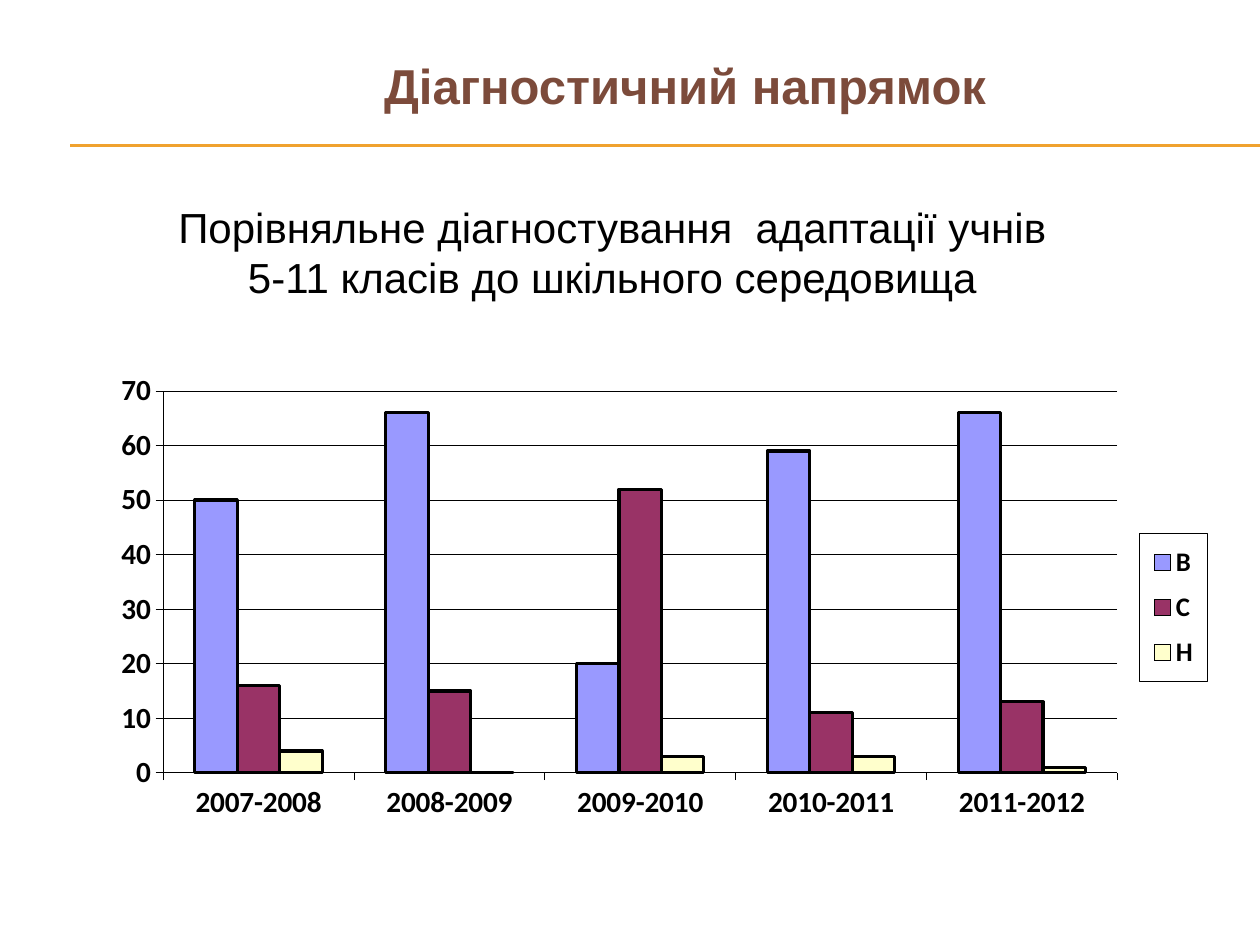
"""Build a slide comparing pupils' adaptation to school over five years."""
from lxml import etree
from pptx import Presentation
from pptx.chart.data import CategoryChartData
from pptx.dml.color import RGBColor
from pptx.enum.chart import XL_CHART_TYPE, XL_LEGEND_POSITION, XL_TICK_LABEL_POSITION, XL_TICK_MARK
from pptx.enum.shapes import MSO_CONNECTOR
from pptx.enum.text import MSO_ANCHOR, PP_ALIGN
from pptx.oxml import parse_xml
from pptx.oxml.ns import nsdecls, qn
from pptx.util import Pt

COLUMN = XL_CHART_TYPE.COLUMN_CLUSTERED
LEGEND_RIGHT = XL_LEGEND_POSITION.RIGHT
LABELS_LOW = XL_TICK_LABEL_POSITION.LOW
TICK_OUTSIDE = XL_TICK_MARK.OUTSIDE
STRAIGHT = MSO_CONNECTOR.STRAIGHT
TOP = MSO_ANCHOR.TOP
CENTER = PP_ALIGN.CENTER

BLACK = RGBColor(0x00, 0x00, 0x00)
BROWN = RGBColor(0x7C, 0x4B, 0x3B)
ORANGE = RGBColor(0xF0, 0xA2, 0x2E)
LILAC = RGBColor(0x99, 0x99, 0xFF)
PLUM = RGBColor(0x99, 0x33, 0x66)
CREAM = RGBColor(0xFF, 0xFF, 0xCC)

TITLE = "Діагностичний напрямок"
SUBTITLE = ["Порівняльне діагностування  адаптації учнів", "5-11 класів до шкільного середовища"]
YEARS = ["2007-2008", "2008-2009", "2009-2010", "2010-2011", "2011-2012"]
SERIES = [
    ("В", [50, 66, 20, 59, 66], LILAC),
    ("С", [16, 15, 52, 11, 13], PLUM),
    ("Н", [4, 0, 3, 3, 1], CREAM),
]


def place(shape, left, top, width, height):
    """Set a shape's position and size in points."""
    shape.left, shape.top = Pt(left), Pt(top)
    shape.width, shape.height = Pt(width), Pt(height)


def style_font(font, name, size, color, bold):
    """Set the face, size, colour and weight of a font."""
    font.name, font.size, font.bold = name, Pt(size), bold
    font.color.rgb = color


def write_lines(frame, lines, size, color, bold=False):
    """Write centred Arial paragraphs into a text frame."""
    frame.vertical_anchor = TOP
    for index, line in enumerate(lines):
        paragraph = frame.add_paragraph() if index else frame.paragraphs[0]
        paragraph.alignment = CENTER
        run = paragraph.add_run()
        run.text = line
        style_font(run.font, "Arial", size, color, bold)


def add_title(slide):
    """Place and fill the title placeholder."""
    title = slide.shapes.title
    place(title, 210, 28, 363, 41)
    title.text_frame.word_wrap = False
    write_lines(title.text_frame, [TITLE], 28, BROWN, True)


def add_subtitle(slide):
    """Add the two-line subtitle."""
    box = slide.shapes.add_textbox(Pt(38.9), Pt(111.6), Pt(622), Pt(65.5))
    box.text_frame.word_wrap = True
    write_lines(box.text_frame, SUBTITLE, 24, BLACK)


def add_rule(slide, y):
    """Add a thin orange line running to the right edge."""
    rule = slide.shapes.add_connector(STRAIGHT, Pt(40.3), Pt(y), Pt(720), Pt(y))
    rule.line.color.rgb = ORANGE
    rule.line.width = Pt(0.75)
    etree.SubElement(rule._element.spPr, qn("a:effectLst"))


def style_line(line, width):
    """Make a chart line black with the given width."""
    line.color.rgb = BLACK
    line.width = Pt(width)


def manual_layout(x, y, width, height, target=""):
    """Return a chart layout element given as fractions of the chart."""
    return parse_xml(
        f'<c:layout {nsdecls("c")}><c:manualLayout>{target}'
        '<c:xMode val="edge"/><c:yMode val="edge"/>'
        f'<c:x val="{x}"/><c:y val="{y}"/><c:w val="{width}"/><c:h val="{height}"/>'
        '</c:manualLayout></c:layout>'
    )


def style_axis(axis):
    """Format an axis line, its ticks and its labels."""
    axis.major_tick_mark = TICK_OUTSIDE
    style_font(axis.tick_labels.font, "Calibri", 16.7, BLACK, True)
    style_line(axis.format.line, 0.45)


def style_legend(chart):
    """Show a framed legend at the right."""
    chart.has_legend = True
    legend = chart.legend
    legend.position = LEGEND_RIGHT
    legend.include_in_layout = False
    style_font(legend.font, "Calibri", 15.3, BLACK, True)
    element = legend._element
    for layout in element.findall(qn("c:layout")):
        element.remove(layout)
    element.find(qn("c:legendPos")).addnext(manual_layout(0.93, 0.36, 0.06, 0.29))
    element.find(qn("c:txPr")).addprevious(parse_xml(
        f'<c:spPr {nsdecls("c", "a")}><a:noFill/><a:ln w="5715"><a:solidFill>'
        f'<a:srgbClr val="{BLACK}"/></a:solidFill></a:ln></c:spPr>'
    ))


def add_results_chart(slide):
    """Add the clustered columns of results by school year."""
    data = CategoryChartData()
    data.categories = YEARS
    for name, values, _ in SERIES:
        data.add_series(name, values)
    frame = slide.shapes.add_chart(COLUMN, Pt(54.7), Pt(200.2), Pt(641.5), Pt(290.9), data)
    chart = frame.chart
    chart.has_title = False
    style_font(chart.font, "Calibri", 16.7, BLACK, True)

    plot = chart.plots[0]
    plot.gap_width, plot.overlap = 150, 0
    plot.vary_by_categories = False
    for series, (_, _, color) in zip(plot.series, SERIES):
        series.format.fill.solid()
        series.format.fill.fore_color.rgb = color
        style_line(series.format.line, 1.8)

    style_axis(chart.category_axis)
    chart.category_axis.tick_label_position = LABELS_LOW
    values_axis = chart.value_axis
    style_axis(values_axis)
    values_axis.minimum_scale, values_axis.maximum_scale = 0, 70
    values_axis.major_unit = 10
    values_axis.has_major_gridlines = True
    style_line(values_axis.major_gridlines.format.line, 0.45)
    style_legend(chart)

    area = chart._chartSpace.chart.plotArea
    for layout in area.findall(qn("c:layout")):
        area.remove(layout)
    area.insert(0, manual_layout(0.06, 0.08, 0.85, 0.75, '<c:layoutTarget val="inner"/>'))


def main():
    """Build and save the presentation."""
    presentation = Presentation()
    presentation.slide_width, presentation.slide_height = Pt(720), Pt(540)
    slide = presentation.slides.add_slide(presentation.slide_layouts[5])
    for y in (82.8, 83.5):
        add_rule(slide, y)
    add_title(slide)
    add_subtitle(slide)
    add_results_chart(slide)
    presentation.save("out.pptx")


if __name__ == "__main__":
    main()
